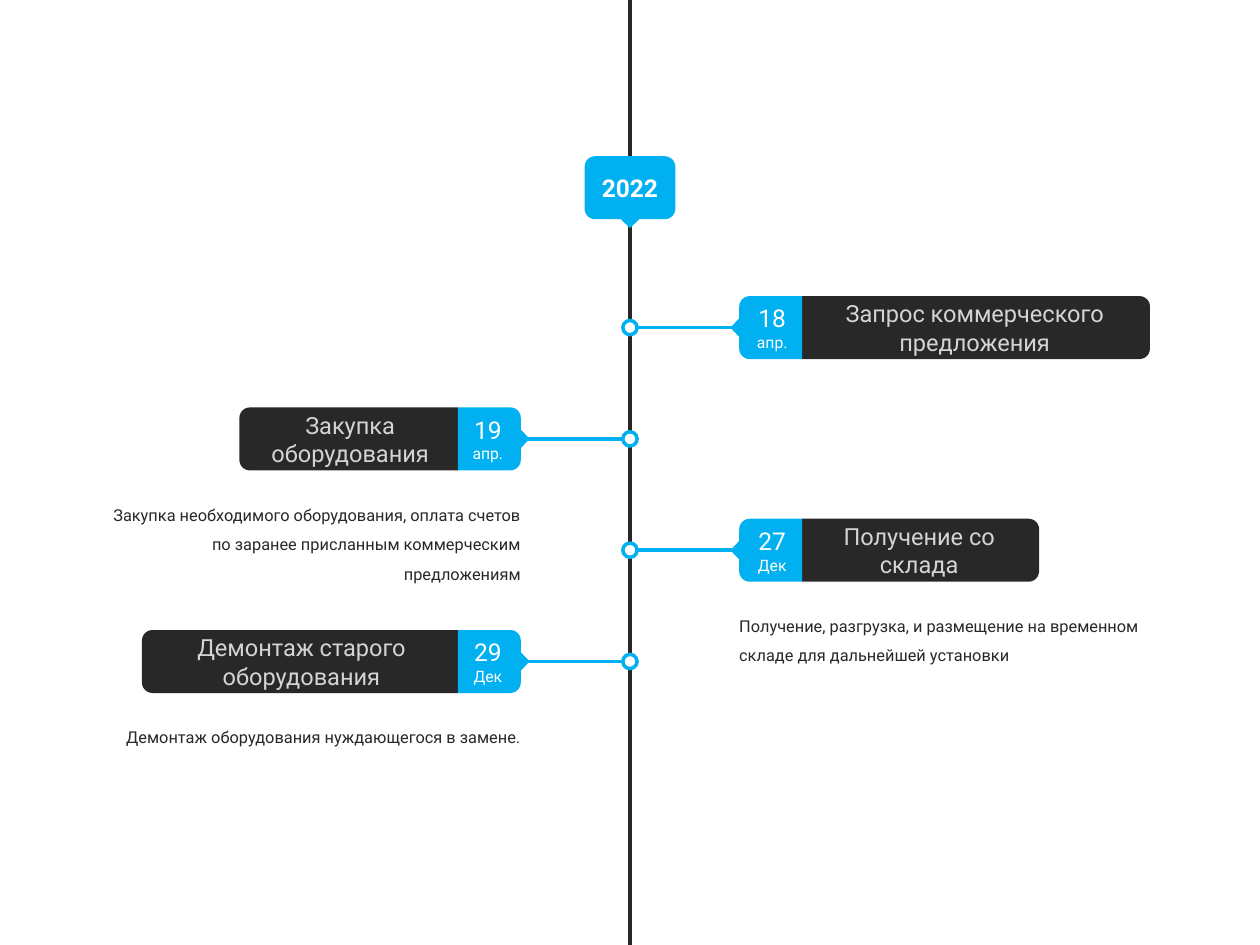
from pptx import Presentation
from pptx.dml.color import RGBColor
from pptx.enum.shapes import MSO_CONNECTOR, MSO_SHAPE
from pptx.enum.text import MSO_ANCHOR, PP_ALIGN
from pptx.oxml.ns import qn
from pptx.util import Inches, Pt
from lxml import etree

STRAIGHT = MSO_CONNECTOR.STRAIGHT
ROUND, TAB = MSO_SHAPE.ROUNDED_RECTANGLE, MSO_SHAPE.ROUND_2_SAME_RECTANGLE
TIP, DOT = MSO_SHAPE.ISOSCELES_TRIANGLE, MSO_SHAPE.OVAL
MIDDLE = MSO_ANCHOR.MIDDLE
LEFT, CENTER, RIGHT = PP_ALIGN.LEFT, PP_ALIGN.CENTER, PP_ALIGN.RIGHT

COLORS = {"dark": "282828", "blue": "00B0F0", "white": "FFFFFF", "grey": "D4D4D4"}
FONT = "Roboto"
MID, TOP, STEP = 7.5, 3.9, 1.325
REACH, SIDE = 1.3, 0.75
EVENTS = [
    (1, "18", "апр.", "Запрос коммерческого предложения", 4.14, ""),
    (-1, "19", "апр.", "Закупка оборудования", 2.6,
     "Закупка необходимого оборудования, оплата счетов по заранее присланным "
     "коммерческим предложениям"),
    (1, "27", "Дек", "Получение со склада", 2.82,
     "Получение, разгрузка, и размещение на временном складе для дальнейшей установки"),
    (-1, "29", "Дек", "Демонтаж старого оборудования", 3.76,
     "Демонтаж оборудования нуждающегося в замене."),
]


def color(name):
    """Return the named colour."""
    return RGBColor.from_string(COLORS[name])


def add_line(slide, x1, y1, x2, y2, tone):
    """Draw a straight line without a shadow."""
    line = slide.shapes.add_connector(STRAIGHT, *map(Inches, (x1, y1, x2, y2)))
    line.line.color.rgb = color(tone)
    line.line.width = Pt(3)
    etree.SubElement(line._element.spPr, qn("a:effectLst"))


def add_form(slide, kind, x, y, wide, high, fill, turn=0):
    """Draw a filled shape centred on x, y."""
    form = slide.shapes.add_shape(
        kind, *map(Inches, (x - wide / 2, y - high / 2, wide, high)))
    form.rotation = turn
    form.shadow.inherit = False
    form.fill.solid()
    form.fill.fore_color.rgb = color(fill)
    form.line.fill.background()
    return form


def write(frame, rows, tone, align=CENTER):
    """Fill a text frame with (text, size) rows."""
    frame.word_wrap = True
    for i, (text, size) in enumerate(rows):
        par = frame.add_paragraph() if i else frame.paragraphs[0]
        par.text = text
        par.alignment = align
        par.font.name = FONT
        par.font.size = Pt(size)
        par.font.color.rgb = color(tone)


def add_tab(slide, x, y, length, fill, way, rows, tone, inset=None):
    """Draw a tab with its round end pointing way and level text."""
    tab = add_form(slide, TAB, x, y, SIDE, length, fill, 90 if way > 0 else 270)
    frame = tab.text_frame
    frame.vertical_anchor = MIDDLE
    if inset:
        frame.margin_left = frame.margin_right = Inches(inset)
        frame.margin_top = frame.margin_bottom = Inches(inset)
    frame._txBody.bodyPr.set("vert", "vert270" if way > 0 else "vert")
    write(frame, rows, tone)


def add_note(slide, way, y, text):
    """Place the description under an event."""
    wide, edge = 4.88, MID + way * REACH
    left = edge if way > 0 else edge - wide
    frame = slide.shapes.add_textbox(
        *map(Inches, (left, y, wide, 1.07))).text_frame
    frame.margin_left = frame.margin_right = 0
    frame.margin_top = frame.margin_bottom = Inches(0.06)
    write(frame, [(text, 14)], "dark", LEFT if way > 0 else RIGHT)
    par = frame.paragraphs[0]
    par.line_spacing = 1.5
    par.space_before = Pt(10)


def add_event(slide, y, way, day, month, name, length, note):
    """Draw one event, right of the axis for way 1 and left for -1."""
    add_line(slide, MID, y, MID + way * REACH, y, "blue")
    dot = add_form(slide, DOT, MID, y, 0.17, 0.17, "white")
    dot.line.color.rgb = color("blue")
    dot.line.width = Pt(3)
    add_tab(slide, MID + way * (REACH + SIDE + length / 2), y, length, "dark",
            way, [(name, 20.2)], "grey", 0.23)
    add_tab(slide, MID + way * (REACH + SIDE / 2), y, SIDE, "blue",
            -way, [(day, 21), (month, 13.5)], "white")
    add_form(slide, TIP, MID + way * (REACH - 0.05), y, 0.23, 0.11, "blue",
             270 if way > 0 else 90)
    if note:
        add_note(slide, way, y + 0.61, note)


def add_year(slide, text):
    """Draw the year badge with its pointer."""
    badge = add_form(slide, ROUND, MID, 2.235, 1.08, SIDE, "blue")
    badge.text_frame.vertical_anchor = MIDDLE
    write(badge.text_frame, [(text, 21)], "white")
    badge.text_frame.paragraphs[0].font.bold = True
    add_form(slide, TIP, MID, 2.66, 0.23, 0.11, "blue", 180)


def main():
    """Build the timeline slide."""
    deck = Presentation()
    deck.slide_width, deck.slide_height = Inches(15), Inches(11.25)
    slide = deck.slides.add_slide(deck.slide_layouts[6])
    add_line(slide, MID, 0, MID, 11.25, "dark")
    add_year(slide, "2022")
    for i, event in enumerate(EVENTS):
        add_event(slide, TOP + i * STEP, *event)
    deck.save("out.pptx")


if __name__ == "__main__":
    main()
